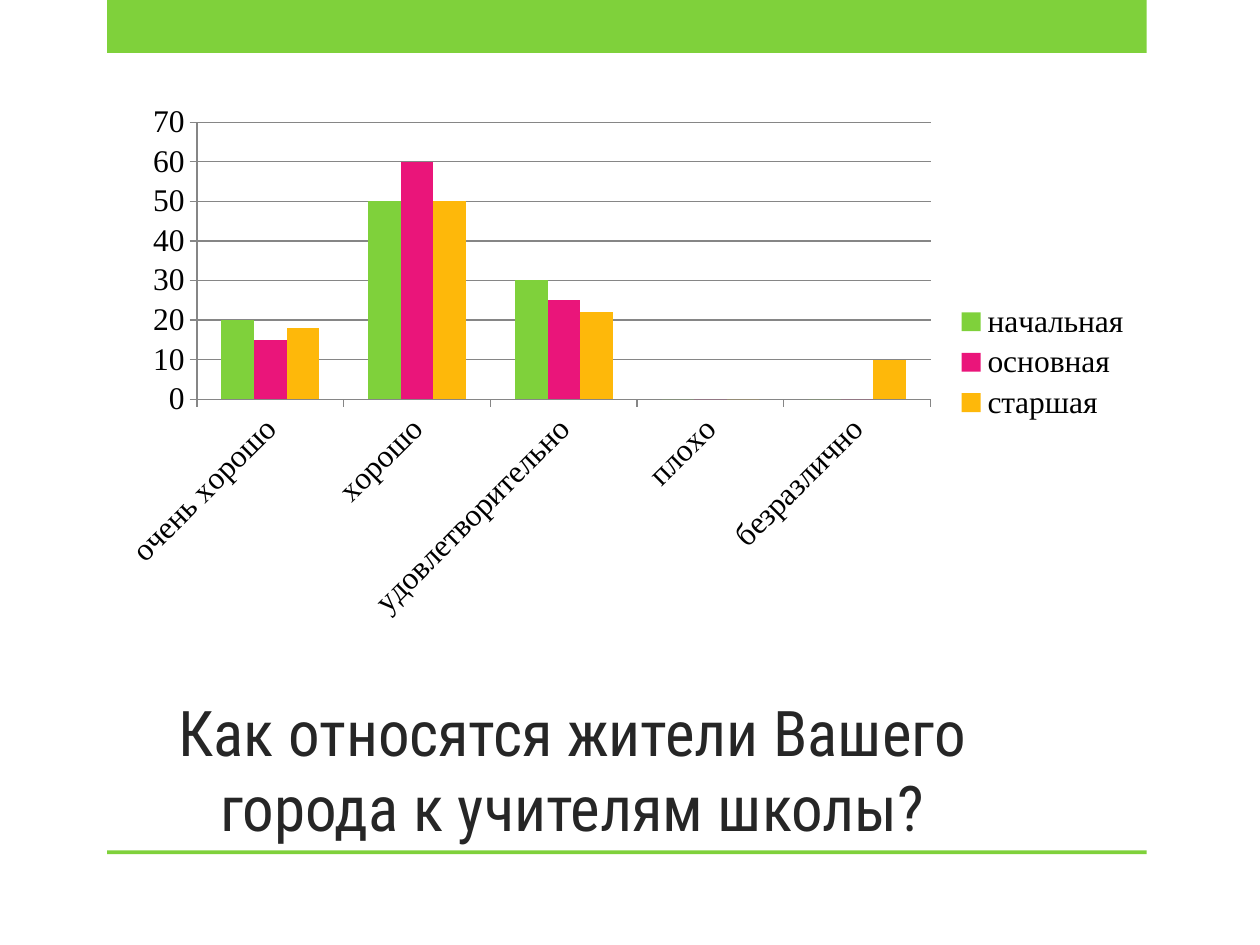
from pptx import Presentation
from pptx.chart.data import CategoryChartData
from pptx.dml.color import RGBColor
from pptx.enum.chart import XL_CHART_TYPE, XL_LEGEND_POSITION, XL_TICK_MARK
from pptx.enum.shapes import MSO_SHAPE
from pptx.enum.text import MSO_ANCHOR, PP_ALIGN
from pptx.util import Inches, Pt

COLUMNS = XL_CHART_TYPE.COLUMN_CLUSTERED
RIGHT = XL_LEGEND_POSITION.RIGHT
OUTSIDE = XL_TICK_MARK.OUTSIDE
RECT = MSO_SHAPE.RECTANGLE
BOTTOM = MSO_ANCHOR.BOTTOM
CENTER = PP_ALIGN.CENTER

COLORS = {"green": "7FD13B", "pink": "EA157A", "amber": "FEB80A",
          "title": "262626", "text": "000000", "grid": "868686"}
TITLE = "Как относятся жители Вашего города к учителям школы?"
CATEGORIES = ["очень хорошо", "хорошо", "удовлетворительно", "плохо", "безразлично"]
SERIES = [("начальная", "green", (20, 50, 30, 0, 0)),
          ("основная", "pink", (15, 60, 25, 0, 0)),
          ("старшая", "amber", (18, 50, 22, 0, 10))]

WIDTH, HEIGHT = 10, 7.5
LEFT, CONTENT_W = WIDTH / 12, 8.25
CHART_TOP, CHART_H = HEIGHT * 0.1, 4.25
TITLE_TOP = CHART_TOP + CHART_H
RULE_TOP = HEIGHT * 0.9
BAR_LEFT = 0.85
BARS = [(0, 0.42), (RULE_TOP, 0.03)]


def rgb(name):
    return RGBColor.from_string(COLORS[name])


def set_font(font, name, size, color):
    font.name, font.size = name, Pt(size)
    font.color.rgb = rgb(color)


def add_text(slide, text, box, *, font, size, color, align, anchor):
    tf = slide.shapes.add_textbox(*map(Inches, box)).text_frame
    tf.word_wrap = True
    tf.vertical_anchor = anchor
    p = tf.paragraphs[0]
    p.alignment = align
    r = p.add_run()
    r.text = text
    set_font(r.font, font, size, color)


def add_bar(slide, top, height):
    sp = slide.shapes.add_shape(
        RECT, *map(Inches, (BAR_LEFT, top, CONTENT_W, height)))
    sp.shadow.inherit = False
    sp.fill.solid()
    sp.fill.fore_color.rgb = rgb("green")
    sp.line.fill.background()


def add_survey_chart(slide, box):
    data = CategoryChartData()
    data.categories = CATEGORIES
    for name, _, values in SERIES:
        data.add_series(name, values)
    chart = slide.shapes.add_chart(COLUMNS, *map(Inches, box), data).chart
    set_font(chart.font, "Times New Roman", 18, "text")
    chart.has_title = False
    chart.has_legend = True
    chart.legend.position = RIGHT
    chart.legend.include_in_layout = False

    plot = chart.plots[0]
    plot.gap_width, plot.overlap = 150, 0
    plot.vary_by_categories = False
    for series, (_, color, _) in zip(plot.series, SERIES):
        series.format.fill.solid()
        series.format.fill.fore_color.rgb = rgb(color)

    category, value = chart.category_axis, chart.value_axis
    value.minimum_scale, value.maximum_scale, value.major_unit = 0, 70, 10
    value.has_major_gridlines = True
    for axis in (category, value):
        axis.major_tick_mark = OUTSIDE
        set_font(axis.tick_labels.font, "Times New Roman", 18, "text")
    for part in (category, value, value.major_gridlines):
        part.format.line.color.rgb = rgb("grid")
        part.format.line.width = Pt(0.75)
    # Slant the category labels upwards by 45 degrees
    category._element.txPr.bodyPr.set("rot", str(-45 * 60000))


def main():
    prs = Presentation()
    prs.slide_width, prs.slide_height = Inches(WIDTH), Inches(HEIGHT)
    slide = prs.slides.add_slide(prs.slide_layouts[6])
    for top, height in BARS:
        add_bar(slide, top, height)
    add_text(slide, TITLE, (LEFT, TITLE_TOP, 7.42, RULE_TOP - TITLE_TOP),
             font="Roboto Condensed", size=36, color="title",
             align=CENTER, anchor=BOTTOM)
    add_survey_chart(slide, (LEFT, CHART_TOP, CONTENT_W, CHART_H))
    prs.save("out.pptx")


if __name__ == "__main__":
    main()
